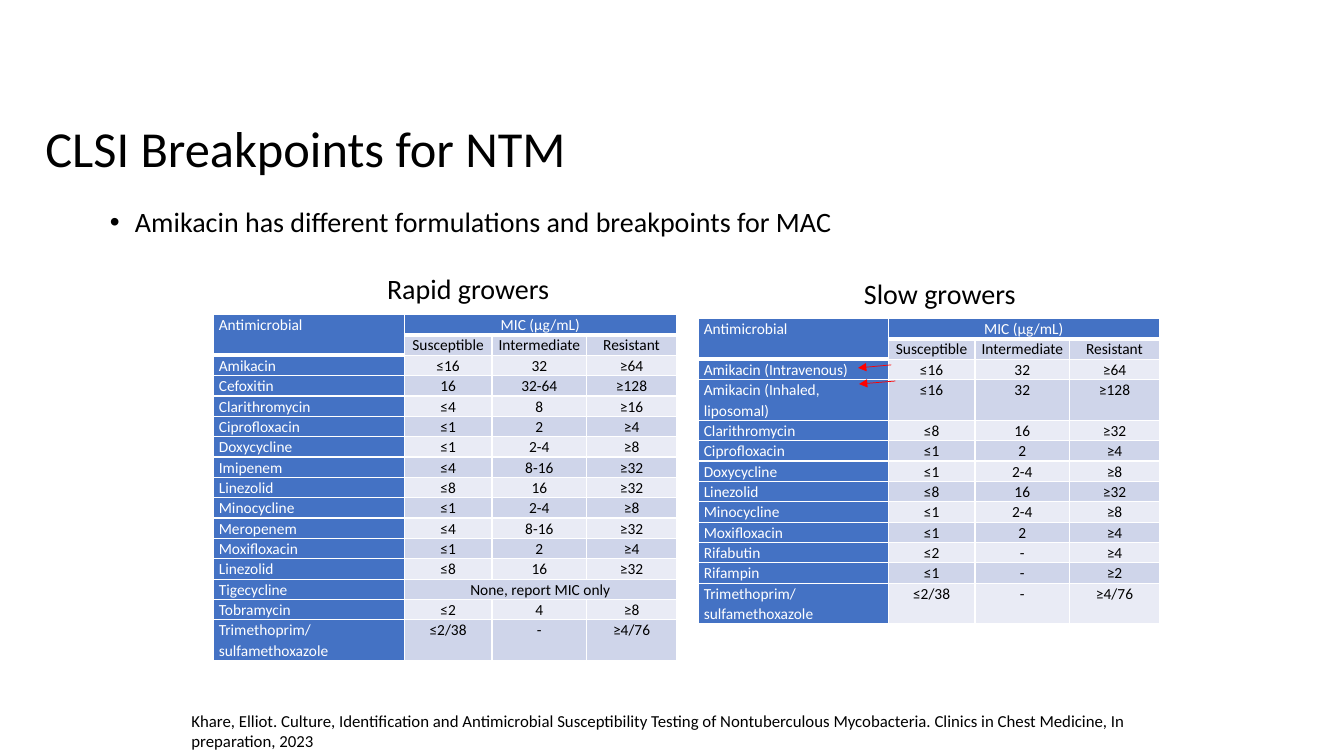
from lxml.etree import SubElement
from pptx import Presentation
from pptx.dml.color import RGBColor
from pptx.enum.shapes import MSO_CONNECTOR
from pptx.enum.text import MSO_ANCHOR, MSO_AUTO_SIZE, PP_ALIGN
from pptx.oxml import parse_xml
from pptx.oxml.ns import nsdecls, qn
from pptx.util import Inches, Pt

BLACK = RGBColor(0x00, 0x00, 0x00)
WHITE = RGBColor(0xFF, 0xFF, 0xFF)
BLUE = RGBColor(0x44, 0x72, 0xC4)
BAND_DARK = RGBColor(0xCF, 0xD5, 0xEA)
BAND_LIGHT = RGBColor(0xE9, 0xEB, 0xF5)
RED = RGBColor(0xFF, 0x00, 0x00)


def write(paragraph, text, size, color=BLACK, spacing=None, align=PP_ALIGN.LEFT):
    paragraph.alignment = align
    paragraph.line_spacing = spacing
    run = paragraph.add_run()
    run.text = text
    run.font.name = "Calibri"
    run.font.size = Pt(size)
    run.font.color.rgb = color


def style_cell(cell, fill, bottom_width):
    cell.margin_left = cell.margin_right = Inches(0.05)
    cell.margin_top = cell.margin_bottom = 0
    properties = cell._tc.get_or_add_tcPr()
    for index, side in enumerate(("L", "R", "T", "B")):
        width = Pt(bottom_width if side == "B" else 1)
        properties.insert(index, parse_xml(
            f'<a:ln{side} {nsdecls("a")} w="{width}"><a:solidFill>'
            f'<a:srgbClr val="{WHITE}"/></a:solidFill></a:ln{side}>'))
    cell.fill.solid()
    cell.fill.fore_color.rgb = fill


presentation = Presentation()
presentation.slide_width = Inches(13.33)
presentation.slide_height = Inches(7.5)
slide = presentation.slides.add_slide(presentation.slide_layouts[5])

# Title
title = slide.shapes.title
title.left, title.top = Inches(0.35), Inches(1.18)
title.width, title.height = Inches(9.43), Inches(0.98)
title.text_frame.vertical_anchor = MSO_ANCHOR.TOP
title.text_frame.auto_size = MSO_AUTO_SIZE.NONE
write(title.text_frame.paragraphs[0], "CLSI Breakpoints for NTM", 36, spacing=0.9)

# Breakpoint tables: each row is drug, susceptible, intermediate, resistant
HEADER = [
    ("Antimicrobial", "MIC (µg/mL)"),
    ("", "Susceptible", "Intermediate", "Resistant"),
]
SLOW_GROWERS = [
    ("Amikacin (Intravenous)", "≤16", "32", "≥64"),
    ("Amikacin (Inhaled, liposomal)", "≤16", "32", "≥128"),
    ("Clarithromycin", "≤8", "16", "≥32"),
    ("Ciprofloxacin", "≤1", "2", "≥4"),
    ("Doxycycline", "≤1", "2-4", "≥8"),
    ("Linezolid", "≤8", "16", "≥32"),
    ("Minocycline", "≤1", "2-4", "≥8"),
    ("Moxifloxacin", "≤1", "2", "≥4"),
    ("Rifabutin", "≤2", "-", "≥4"),
    ("Rifampin", "≤1", "-", "≥2"),
    ("Trimethoprim/ sulfamethoxazole", "≤2/38", "-", "≥4/76"),
]
RAPID_GROWERS = [
    ("Amikacin", "≤16", "32", "≥64"),
    ("Cefoxitin", "16", "32-64", "≥128"),
    ("Clarithromycin", "≤4", "8", "≥16"),
    ("Ciprofloxacin", "≤1", "2", "≥4"),
    ("Doxycycline", "≤1", "2-4", "≥8"),
    ("Imipenem", "≤4", "8-16", "≥32"),
    ("Linezolid", "≤8", "16", "≥32"),
    ("Minocycline", "≤1", "2-4", "≥8"),
    ("Meropenem", "≤4", "8-16", "≥32"),
    ("Moxifloxacin", "≤1", "2", "≥4"),
    ("Linezolid", "≤8", "16", "≥32"),
    ("Tigecycline", "None, report MIC only"),
    ("Tobramycin", "≤2", "4", "≥8"),
    ("Trimethoprim/ sulfamethoxazole", "≤2/38", "-", "≥4/76"),
]
TABLES = [
    (SLOW_GROWERS, 6.93, 3.16, 3.03, (1.88, 0.86, 0.94, 0.89)),
    (RAPID_GROWERS, 2.12, 3.12, 3.34, (1.89, 0.87, 0.94, 0.89)),
]
for drugs, left, top, height, widths in TABLES:
    rows = HEADER + drugs
    line_counts = [2 if len(row[0]) > 24 else 1 for row in rows]
    table = slide.shapes.add_table(
        len(rows), 4, Inches(left), Inches(top),
        Inches(sum(widths)), Inches(height)).table
    for column, width in zip(table.columns, widths):
        column.width = Inches(width)
    for row_index, row in enumerate(rows):
        table.rows[row_index].height = Inches(height * line_counts[row_index] / sum(line_counts))
        for column_index in range(4):
            cell = table.cell(row_index, column_index)
            is_blue = row_index == 0 or column_index == 0
            band = BAND_DARK if row_index % 2 else BAND_LIGHT
            style_cell(cell, BLUE if is_blue else band, 3 if row_index == 0 else 1)
            if column_index < len(row) and row[column_index]:
                write(cell.text_frame.paragraphs[0], row[column_index], 11,
                      WHITE if is_blue else BLACK, 1.07,
                      PP_ALIGN.CENTER if column_index else PP_ALIGN.LEFT)
        if len(row) == 2:
            table.cell(row_index, 1).merge(table.cell(row_index, 3))
    table.cell(0, 0).merge(table.cell(1, 0))

# Citation and table captions
CITATION = ("Khare, Elliot. Culture, Identification and Antimicrobial Susceptibility "
            "Testing of Nontuberculous Mycobacteria. Clinics in Chest Medicine, "
            "In preparation, 2023")
for text, left, top, width, height, size, wrap in [
    (CITATION, 1.8, 7, 9.58, 0.5, 12, True),
    ("Rapid growers", 3.74, 2.64, 1.82, 0.44, 20, False),
    ("Slow growers", 8.47, 2.69, 1.72, 0.44, 20, False),
]:
    label = slide.shapes.add_textbox(Inches(left), Inches(top), Inches(width), Inches(height))
    label.text_frame.word_wrap = wrap
    write(label.text_frame.paragraphs[0], text, size)

# Bullet
body = slide.shapes.add_textbox(Inches(0.99), Inches(2.02), Inches(8.62), Inches(3.57))
body.text_frame.word_wrap = True
paragraph = body.text_frame.paragraphs[0]
properties = paragraph._p.get_or_add_pPr()
properties.set("marL", str(Inches(0.25)))
properties.set("indent", str(Inches(-0.25)))
SubElement(properties, qn("a:buFont"), typeface="Arial")
SubElement(properties, qn("a:buChar"), char="•")
write(paragraph, "Amikacin has different formulations and breakpoints for MAC", 20, spacing=0.9)

# Red arrows pointing at the two amikacin formulations
for start_x, start_y, end_x, end_y in [(8.88, 3.78, 8.52, 3.81), (8.84, 3.62, 8.51, 3.65)]:
    arrow = slide.shapes.add_connector(
        MSO_CONNECTOR.STRAIGHT, Inches(start_x), Inches(start_y), Inches(end_x), Inches(end_y))
    arrow.line.color.rgb = RED
    arrow.line.width = Pt(0.5)
    SubElement(arrow.line._get_or_add_ln(), qn("a:tailEnd"), type="triangle")
    SubElement(arrow._element.spPr, qn("a:effectLst"))

presentation.save("out.pptx")
